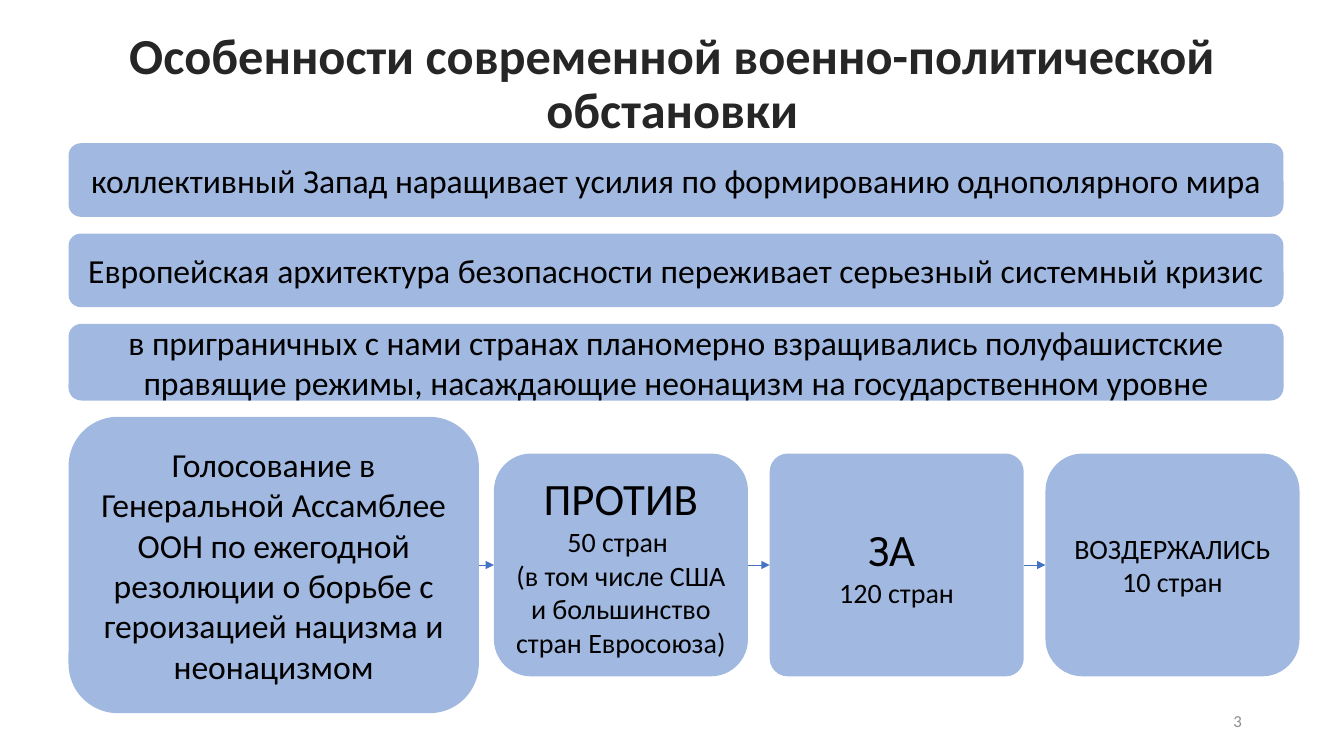
from dataclasses import dataclass

from lxml import etree
from pptx import Presentation
from pptx.dml.color import RGBColor
from pptx.enum.shapes import MSO_CONNECTOR, MSO_SHAPE
from pptx.enum.text import MSO_ANCHOR, PP_ALIGN
from pptx.oxml.ns import qn
from pptx.util import Inches, Pt

ROUNDED, STRAIGHT = MSO_SHAPE.ROUNDED_RECTANGLE, MSO_CONNECTOR.STRAIGHT
CENTER, RIGHT, MIDDLE = PP_ALIGN.CENTER, PP_ALIGN.RIGHT, MSO_ANCHOR.MIDDLE
LEFT_SITE, RIGHT_SITE = 1, 3

BLUE = RGBColor(0x44, 0x72, 0xC4)
BLACK = RGBColor(0x00, 0x00, 0x00)
DARK = RGBColor(0x26, 0x26, 0x26)
GREY = RGBColor(0x8C, 0x8C, 0x8C)
FONT = "Calibri"

# The grid divides the slide into 100 columns and 100 rows.
SLIDE_WIDTH, SLIDE_HEIGHT = Inches(13.333), Inches(7.5)
COLUMN, ROW = SLIDE_WIDTH / 100, SLIDE_HEIGHT / 100
MARGIN = 5.1
BAR_WIDTH, BAR_TOP, BAR_STEP = 90.4, 18.95, 11.95
VOTE_LEFT, VOTE_STEP, VOTE_TOP = 36.75, 20.52, 60
VOTE_WIDTH, VOTE_HEIGHT = 18.9, 29.47


@dataclass(frozen=True)
class Area:
    """A place on the grid, in columns and rows."""
    left: float
    top: float
    width: float
    height: float

    def lengths(self) -> tuple[int, int, int, int]:
        return (round(self.left * COLUMN), round(self.top * ROW),
                round(self.width * COLUMN), round(self.height * ROW))


@dataclass(frozen=True)
class Line:
    text: str
    size: int = 24


@dataclass(frozen=True)
class Card:
    area: Area
    lines: tuple[Line, ...]
    corner: float = 0.1667


THESES = (
    (9.73, "коллективный Запад наращивает усилия по формированию однополярного мира"),
    (9.73, "Европейская архитектура безопасности переживает серьезный системный кризис"),
    (10.13, "в приграничных с нами странах планомерно взращивались полуфашистские "
            "правящие режимы, насаждающие неонацизм на государственном уровне"),
)
VOTES = (
    (0.1667, (Line("ПРОТИВ", 32),
              Line("50 стран \n(в том числе США и большинство стран Евросоюза)", 20))),
    (0.081, (Line("ЗА ", 32), Line("120 стран", 20))),
    (0.1667, (Line("ВОЗДЕРЖАЛИСЬ", 20), Line("10 стран", 20))),
)
THESIS_CARDS = [
    Card(Area(MARGIN, BAR_TOP + i * BAR_STEP, BAR_WIDTH, height), (Line(text),))
    for i, (height, text) in enumerate(THESES)
]
VOTE_CARDS = [
    Card(Area(MARGIN, 55.14, 30.53, 39.2),
         (Line("Голосование в Генеральной Ассамблее ООН по ежегодной резолюции "
               "о борьбе с героизацией нацизма и неонацизмом"),))
] + [
    Card(Area(VOTE_LEFT + i * VOTE_STEP, VOTE_TOP, VOTE_WIDTH, VOTE_HEIGHT), lines, corner)
    for i, (corner, lines) in enumerate(VOTES)
]


def set_font(font, size: int, color: RGBColor, bold: bool = False) -> None:
    for name, value in {"name": FONT, "size": Pt(size), "bold": bold}.items():
        setattr(font, name, value)
    font.color.rgb = color


def place(shape, area: Area) -> None:
    for name, value in zip(("left", "top", "width", "height"), area.lengths()):
        setattr(shape, name, value)


def add_title(slide, text: str, area: Area) -> None:
    title = slide.shapes.title
    place(title, area)
    frame = title.text_frame
    frame.word_wrap, frame.vertical_anchor = True, MIDDLE
    paragraph = frame.paragraphs[0]
    paragraph.alignment, paragraph.line_spacing = CENTER, 0.9
    run = paragraph.add_run()
    run.text = text
    set_font(run.font, 36, DARK, bold=True)


def add_card(slide, card: Card):
    shape = slide.shapes.add_shape(ROUNDED, *card.area.lengths())
    shape.adjustments[0] = card.corner
    shape.shadow.inherit = False
    shape.line.fill.background()
    shape.fill.solid()
    shape.fill.fore_color.rgb = BLUE
    color = shape.fill._xPr.find(".//" + qn("a:srgbClr"))
    etree.SubElement(color, qn("a:alpha"), val="50000")

    frame = shape.text_frame
    frame.word_wrap, frame.vertical_anchor = True, MIDDLE
    for i, line in enumerate(card.lines):
        paragraph = frame.add_paragraph() if i else frame.paragraphs[0]
        paragraph.alignment = CENTER
        paragraph.text = line.text
        for run in paragraph.runs:
            set_font(run.font, line.size, BLACK)
    return shape


def add_arrow(slide, source, target) -> None:
    arrow = slide.shapes.add_connector(STRAIGHT, 0, 0, 0, 0)
    arrow.begin_connect(source, RIGHT_SITE)
    arrow.end_connect(target, LEFT_SITE)
    arrow.line.color.rgb = BLUE
    arrow.line.width = Pt(0.5)
    etree.SubElement(arrow.line._get_or_add_ln(), qn("a:tailEnd"), type="triangle")
    etree.SubElement(arrow._element.spPr, qn("a:effectLst"))


def add_slide_number(slide, number: int, area: Area) -> None:
    """Add the number as a field that follows the slide's position."""
    frame = slide.shapes.add_textbox(*area.lengths()).text_frame
    frame.word_wrap, frame.vertical_anchor = True, MIDDLE
    paragraph = frame.paragraphs[0]
    paragraph.alignment = RIGHT
    run = paragraph.add_run()
    run.text = str(number)
    set_font(run.font, 12, GREY)


def main() -> None:
    deck = Presentation()
    deck.slide_width, deck.slide_height = SLIDE_WIDTH, SLIDE_HEIGHT
    slide = deck.slides.add_slide(deck.slide_layouts.get_by_name("Title Only"))

    add_title(slide, "Особенности современной военно-политической обстановки",
              Area(6.9, 5.33, 86.25, 11.87))
    for card in THESIS_CARDS:
        add_card(slide, card)
    votes = [add_card(slide, card) for card in VOTE_CARDS]
    for source, target in zip(votes, votes[1:]):
        add_arrow(slide, source, target)
    add_slide_number(slide, 3, Area(70.65, 92.67, 22.5, 5.33))

    deck.save("out.pptx")


if __name__ == "__main__":
    main()
